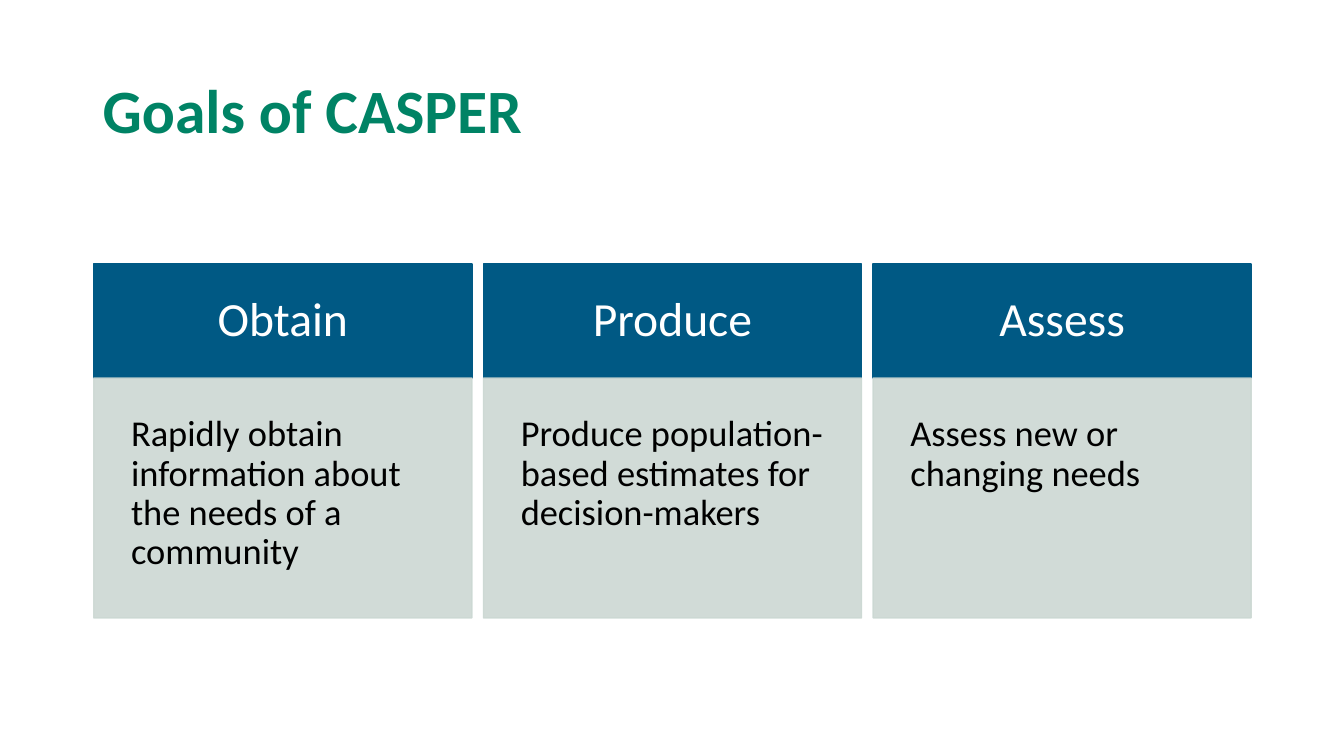
from dataclasses import dataclass
from typing import Any

from lxml.etree import SubElement
from pptx import Presentation
from pptx.dml.color import RGBColor
from pptx.dml.fill import FillFormat
from pptx.enum.shapes import MSO_SHAPE
from pptx.enum.text import MSO_ANCHOR, PP_ALIGN
from pptx.oxml.ns import qn
from pptx.shapes.autoshape import Shape
from pptx.slide import Slide
from pptx.util import Inches, Pt

COLUMN_LEFT = 0.93
COLUMN_WIDTH = 3.75
COLUMN_PITCH = 3.865


@dataclass(frozen=True)
class Goal:
    verb: str
    detail: str


@dataclass(frozen=True)
class Band:
    top: float
    height: float
    fill: str
    opacity: int
    frame: dict[str, Any]
    paragraph: dict[str, Any]
    font: dict[str, Any]
    ink: str


GOALS = [
    Goal("Obtain", "Rapidly obtain information about the needs of a community"),
    Goal("Produce", "Produce population-based estimates for decision-makers"),
    Goal("Assess", "Assess new or changing needs"),
]


def margins(inset: float) -> dict[str, Any]:
    return {f"margin_{side}": Inches(inset) for side in ("left", "top", "right", "bottom")}


HEADING = Band(
    2.62, 1.13, "005984", 100,
    margins(0.3) | {"vertical_anchor": MSO_ANCHOR.MIDDLE},
    {"alignment": PP_ALIGN.CENTER}, {"size": Pt(34)}, "FFFFFF",
)
DETAIL = Band(
    3.75, 2.38, "CCD8D3", 90,
    margins(0.37) | {"vertical_anchor": MSO_ANCHOR.TOP},
    {"alignment": PP_ALIGN.LEFT}, {"size": Pt(26)}, "000000",
)


def color(code: str) -> RGBColor:
    return RGBColor.from_string(code)


def apply(target: Any, values: dict[str, Any]) -> None:
    for name, value in values.items():
        setattr(target, name, value)


def paint(fill: FillFormat, code: str) -> None:
    fill.solid()
    fill.fore_color.rgb = color(code)


def write(
    holder: Shape, wording: str, frame: dict[str, Any],
    paragraph: dict[str, Any], font: dict[str, Any], ink: str,
) -> None:
    apply(holder.text_frame, {"word_wrap": True} | frame)
    line = holder.text_frame.paragraphs[0]
    line.text = wording
    apply(line, {"line_spacing": 0.9} | paragraph)
    apply(line.runs[0].font, {"name": "Calibri"} | font)
    line.runs[0].font.color.rgb = color(ink)


def draw_band(slide: Slide, left: float, band: Band, wording: str) -> None:
    panel = slide.shapes.add_shape(
        MSO_SHAPE.RECTANGLE, Inches(left), Inches(band.top),
        Inches(COLUMN_WIDTH), Inches(band.height),
    )
    panel.shadow.inherit = False
    paint(panel.fill, band.fill)
    paint(panel.line.fill, band.fill)
    panel.line.width = Pt(1)
    if band.opacity < 100:
        for tint in panel.element.spPr.iter(qn("a:srgbClr")):
            SubElement(tint, qn("a:alpha")).set("val", str(band.opacity * 1000))
    write(panel, wording, band.frame, band.paragraph, band.font, band.ink)


def draw_title(slide: Slide, wording: str) -> None:
    title = slide.shapes.add_textbox(Inches(0.92), Inches(0.4), Inches(11.5), Inches(1.45))
    write(
        title, wording, {"vertical_anchor": MSO_ANCHOR.MIDDLE},
        {"alignment": PP_ALIGN.LEFT}, {"size": Pt(44), "bold": True}, "008365",
    )


def main() -> None:
    deck = Presentation()
    apply(deck, {"slide_width": Inches(13.33), "slide_height": Inches(7.5)})
    slide = deck.slides.add_slide(deck.slide_layouts[6])
    draw_title(slide, "Goals of CASPER")
    for index, goal in enumerate(GOALS):
        left = COLUMN_LEFT + index * COLUMN_PITCH
        draw_band(slide, left, HEADING, goal.verb)
        draw_band(slide, left, DETAIL, goal.detail)
    deck.save("out.pptx")


if __name__ == "__main__":
    main()
